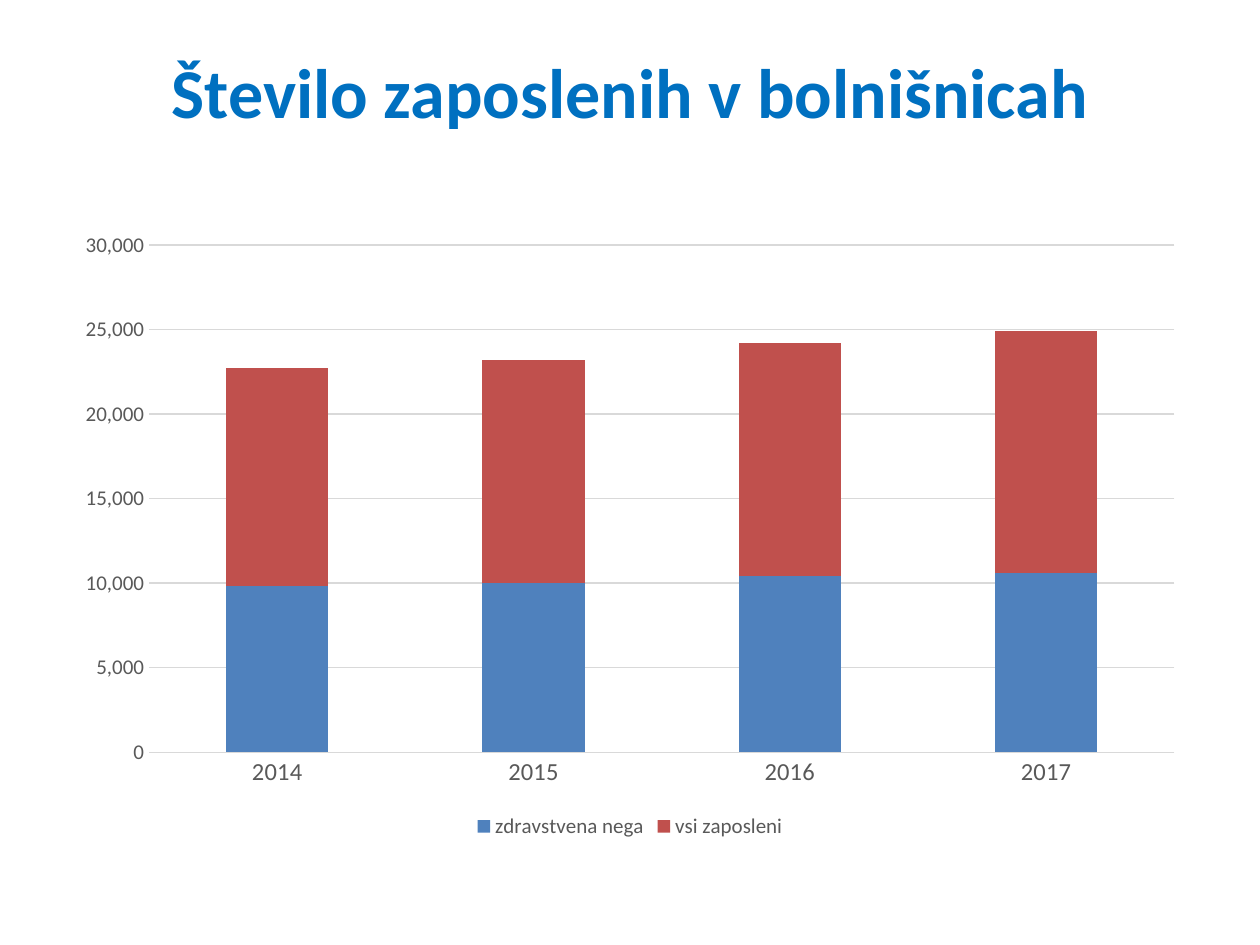
"""Build a slide with a stacked column chart of hospital staff by year."""
from pptx import Presentation
from pptx.chart.data import CategoryChartData
from pptx.dml.color import RGBColor
from pptx.enum.chart import XL_CHART_TYPE, XL_LEGEND_POSITION, XL_TICK_MARK
from pptx.enum.text import MSO_ANCHOR, PP_ALIGN
from pptx.util import Emu, Pt

STACKED = XL_CHART_TYPE.COLUMN_STACKED
BOTTOM = XL_LEGEND_POSITION.BOTTOM
NO_TICK = XL_TICK_MARK.NONE
MIDDLE = MSO_ANCHOR.MIDDLE
CENTER = PP_ALIGN.CENTER

TITLE = "Število zaposlenih v bolnišnicah"
YEARS = ["2014", "2015", "2016", "2017"]
STAFF = [
    ("zdravstvena nega", "nursing", [9800, 10000, 10400, 10600]),
    ("vsi zaposleni", "all", [12900, 13200, 13800, 14300]),
]
COLORS = {"title": "0070C0", "label": "595959", "grid": "D9D9D9",
          "nursing": "4F81BD", "all": "C0504D"}
FONT = "Calibri"
EMU_PER_PX = 914400 // 126
SLIDE_SIZE = (1260, 945)
TITLE_BOX = (63, 11, 1134, 158)
CHART_BOX = (63, 220, 1134, 624)


def px(lengths):
    return [Emu(length * EMU_PER_PX) for length in lengths]


def color(key):
    return RGBColor.from_string(COLORS[key])


def style_font(font, size, key, bold=False):
    font.name, font.size, font.bold = FONT, Pt(size), bold
    font.color.rgb = color(key)


def style_line(line):
    line.color.rgb = color("grid")
    line.width = Pt(0.75)


def add_title(slide):
    frame = slide.shapes.add_textbox(*px(TITLE_BOX)).text_frame
    frame.word_wrap = True
    frame.vertical_anchor = MIDDLE
    paragraph = frame.paragraphs[0]
    paragraph.alignment = CENTER
    run = paragraph.add_run()
    run.text = TITLE
    style_font(run.font, 40, "title", bold=True)


def add_staff_chart(slide):
    data = CategoryChartData(number_format="#,##0")
    data.categories = YEARS
    for name, _, counts in STAFF:
        data.add_series(name, counts)
    chart = slide.shapes.add_chart(STACKED, *px(CHART_BOX), data).chart
    chart.has_title = False
    style_font(chart.font, 10, "label")

    plot = chart.plots[0]
    plot.gap_width, plot.overlap, plot.vary_by_categories = 150, 100, False
    for series, (_, key, _) in zip(plot.series, STAFF):
        series.format.fill.solid()
        series.format.fill.fore_color.rgb = color(key)

    years, counts = chart.category_axis, chart.value_axis
    for axis, size in ((years, 14), (counts, 12)):
        axis.major_tick_mark = axis.minor_tick_mark = NO_TICK
        style_font(axis.tick_labels.font, size, "label")
    style_line(years.format.line)
    counts.format.line.fill.background()
    counts.minimum_scale, counts.maximum_scale, counts.major_unit = 0, 30000, 5000
    counts.tick_labels.number_format = "#,##0"
    counts.tick_labels.number_format_is_linked = False
    style_line(counts.major_gridlines.format.line)

    chart.has_legend = True
    chart.legend.position = BOTTOM
    chart.legend.include_in_layout = False
    style_font(chart.legend.font, 12, "label")


def main():
    deck = Presentation()
    deck.slide_width, deck.slide_height = px(SLIDE_SIZE)
    slide = deck.slides.add_slide(deck.slide_layouts[6])
    add_title(slide)
    add_staff_chart(slide)
    deck.save("out.pptx")


if __name__ == "__main__":
    main()
